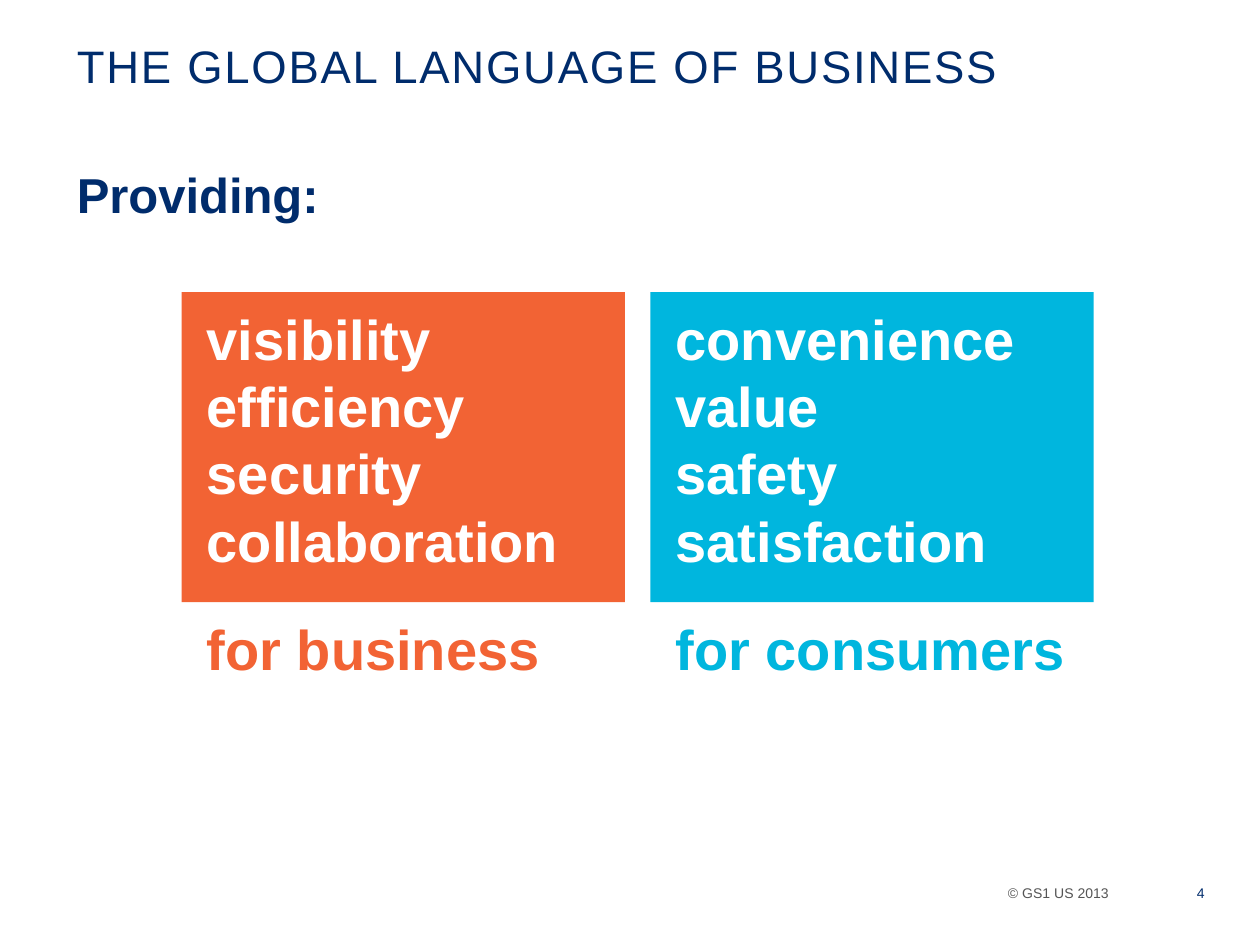
import pptx
import pptx.dml.color
import pptx.enum.shapes
import pptx.enum.text
import pptx.util
from pptx.util import Cm

THEME = {
    "font": "Arial",
    "navy": "002C6C",
    "orange": "F26334",
    "cyan": "00B6DE",
    "grey": "555555",
    "white": "FFFFFF",
    "title_size": 26,
    "intro_size": 28,
    "benefit_size": 32,
    "footer_size": 8,
}

TITLE = "THE GLOBAL LANGUAGE OF BUSINESS"
INTRO = "Providing:"
AUDIENCES = [
    ("for business", "orange", ["visibility", "efficiency", "security", "collaboration"]),
    ("for consumers", "cyan", ["convenience", "value", "safety", "satisfaction"]),
]
COPYRIGHT = "© GS1 US 2013"
PAGE = "4"

HEADING_INSETS = (0.25, 0.13, 0.25, 0.13)
BENEFIT_INSETS = (0.51, 0.25, 0.51, 0.51)
FOOTER_INSETS = (0, 0, 0, 0)


def write(slide, text, box, *, size, color, insets, fill=None, bold=False,
          anchor="TOP", tracking=0):
    place = [Cm(length) for length in box]
    if fill:
        holder = slide.shapes.add_shape(pptx.enum.shapes.MSO_SHAPE.RECTANGLE, *place)
        holder.shadow.inherit = False
        holder.fill.solid()
        holder.fill.fore_color.rgb = pptx.dml.color.RGBColor.from_string(THEME[fill])
        holder.line.fill.background()
    else:
        holder = slide.shapes.add_textbox(*place)
    frame = holder.text_frame
    frame.word_wrap = True
    frame.vertical_anchor = pptx.enum.text.MSO_ANCHOR[anchor]
    frame.margin_left, frame.margin_top, frame.margin_right, frame.margin_bottom = map(Cm, insets)
    paragraph = frame.paragraphs[0]
    paragraph.alignment = pptx.enum.text.PP_ALIGN.LEFT
    for index, line in enumerate(text.split("\n")):
        if index:
            paragraph.add_line_break()
        run = paragraph.add_run()
        run.text = line
        run.font.name = THEME["font"]
        run.font.size = pptx.util.Pt(THEME[size])
        run.font.bold = bold
        run.font.color.rgb = pptx.dml.color.RGBColor.from_string(THEME[color])
        if tracking:
            run.font._element.set("spc", str(tracking * 100))


def main():
    deck = pptx.Presentation()
    deck.slide_width, deck.slide_height = Cm(25.4), Cm(19.05)
    slide = deck.slides.add_slide(deck.slide_layouts[6])

    write(slide, TITLE, (1.3, 0.64, 22.86, 1.6), size="title_size", color="navy",
          insets=HEADING_INSETS, tracking=1)
    write(slide, INTRO, (1.3, 3.18, 22.25, 1.5), size="intro_size", color="navy",
          insets=HEADING_INSETS, bold=True)

    left, top, width, height, gap = 3.66, 5.89, 8.94, 6.25, 0.51
    for column, (audience, accent, benefits) in enumerate(AUDIENCES):
        x = left + column * (width + gap)
        write(slide, "\n".join(benefits), (x, top, width, height), size="benefit_size",
              color="white", insets=BENEFIT_INSETS, fill=accent, bold=True)
        write(slide, audience, (x, top + height, width, 2.13), size="benefit_size",
              color=accent, insets=BENEFIT_INSETS, bold=True)

    for label, x, width, color in [(COPYRIGHT, 20.32, 2.92, "grey"), (PAGE, 24.13, 0.97, "navy")]:
        write(slide, label, (x, 17.73, width, 0.56), size="footer_size", color=color,
              insets=FOOTER_INSETS, anchor="MIDDLE")

    deck.save("out.pptx")


if __name__ == "__main__":
    main()
